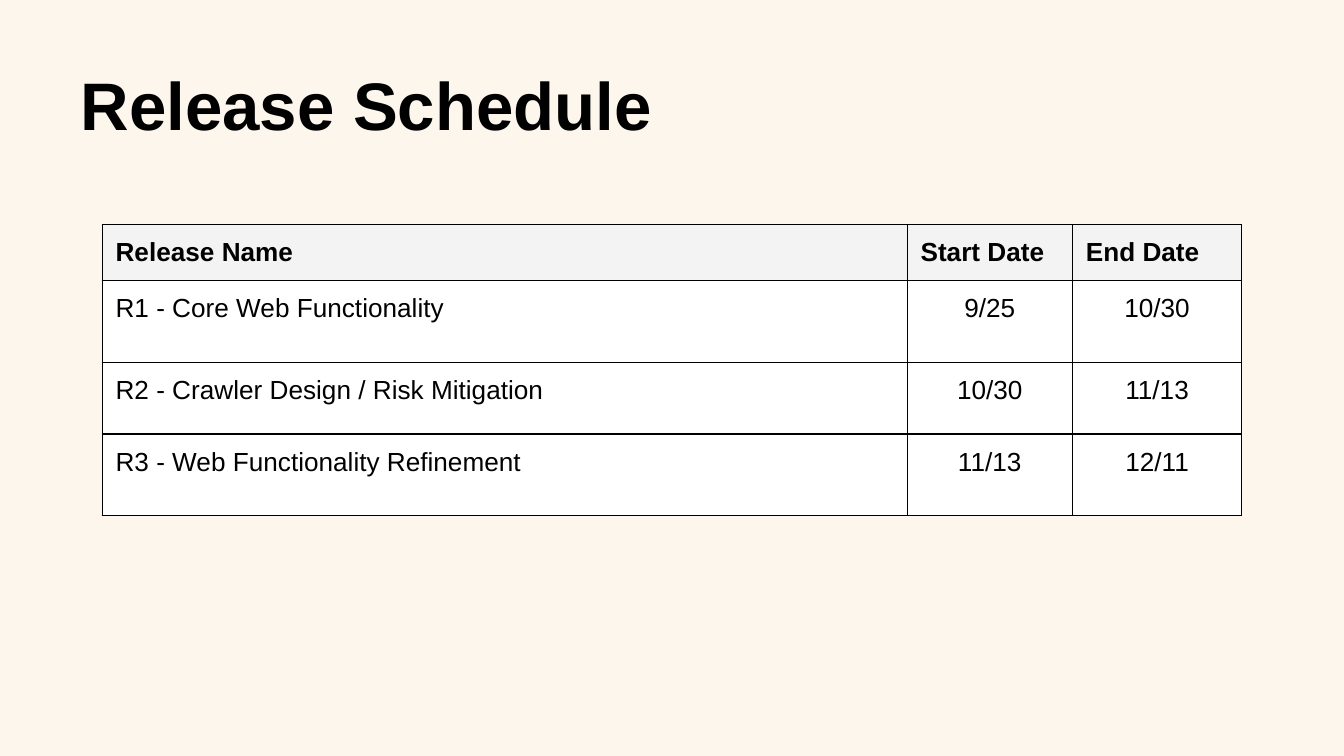
import pptx
import pptx.dml.color
import pptx.enum.text
import pptx.oxml.ns
import pptx.util
from lxml import etree

Inches = pptx.util.Inches
Pt = pptx.util.Pt
ALIGN = pptx.enum.text.PP_ALIGN

COLORS = {"page": "FCF6ED", "head": "F3F3F3", "body": "FFFFFF", "ink": "000000"}
WIDTHS = [5.99, 1.23, 1.26]
HEIGHTS = [0.41, 0.61, 0.53, 0.61]
ROWS = [
    ["Release Name", "Start Date", "End Date"],
    ["R1 - Core Web Functionality", "9/25", "10/30"],
    ["R2 - Crawler Design / Risk Mitigation", "10/30", "11/13"],
    ["R3 - Web Functionality Refinement", "11/13", "12/11"],
]


def paint(fill, name):
    fill.solid()
    fill.fore_color.rgb = pptx.dml.color.RGBColor.from_string(COLORS[name])


def write(frame, text, size, bold, align):
    frame.text = text
    para = frame.paragraphs[0]
    para.alignment = align
    font = para.font
    font.name, font.size, font.bold = "Arial", Pt(size), bold
    paint(font.fill, "ink")


def pad(box):
    """Give a cell or text frame equal margins on all sides."""
    box.margin_left = box.margin_right = Inches(0.1)
    box.margin_top = box.margin_bottom = Inches(0.1)


def border(cell):
    qn = pptx.oxml.ns.qn
    props = cell._tc.get_or_add_tcPr()
    for side in ("lnL", "lnR", "lnT", "lnB"):
        line = etree.SubElement(props, qn(f"a:{side}"), w=str(Pt(0.75)))
        fill = etree.SubElement(line, qn("a:solidFill"))
        etree.SubElement(fill, qn("a:srgbClr"), val=COLORS["ink"])


def add_title(slide, text):
    title = slide.shapes.title
    title.left, title.top = Inches(0.5), Inches(0.23)
    title.width, title.height = Inches(9), Inches(0.94)
    frame = title.text_frame
    pad(frame)
    frame.auto_size = pptx.enum.text.MSO_AUTO_SIZE.NONE
    frame.vertical_anchor = pptx.enum.text.MSO_ANCHOR.BOTTOM
    write(frame, text, 36, True, ALIGN.LEFT)


def add_dates(slide):
    """Add the table of releases with their start and end dates."""
    table = slide.shapes.add_table(
        len(ROWS), len(WIDTHS), Inches(0.76), Inches(1.67),
        Inches(sum(WIDTHS)), Inches(sum(HEIGHTS))).table
    for col, width in zip(table.columns, WIDTHS):
        col.width = Inches(width)
    for row, height in zip(table.rows, HEIGHTS):
        row.height = Inches(height)
    for r, texts in enumerate(ROWS):
        for c, text in enumerate(texts):
            cell = table.cell(r, c)
            head = r == 0
            pad(cell)
            border(cell)
            paint(cell.fill, "head" if head else "body")
            align = ALIGN.LEFT if head or c == 0 else ALIGN.CENTER
            write(cell.text_frame, text, 14, head, align)


def main():
    deck = pptx.Presentation()
    deck.slide_width = Inches(10)
    deck.slide_height = Inches(10 * 9 / 16)
    slide = deck.slides.add_slide(deck.slide_layouts[5])
    paint(slide.background.fill, "page")
    add_title(slide, "Release Schedule")
    add_dates(slide)
    deck.save("out.pptx")


if __name__ == "__main__":
    main()
